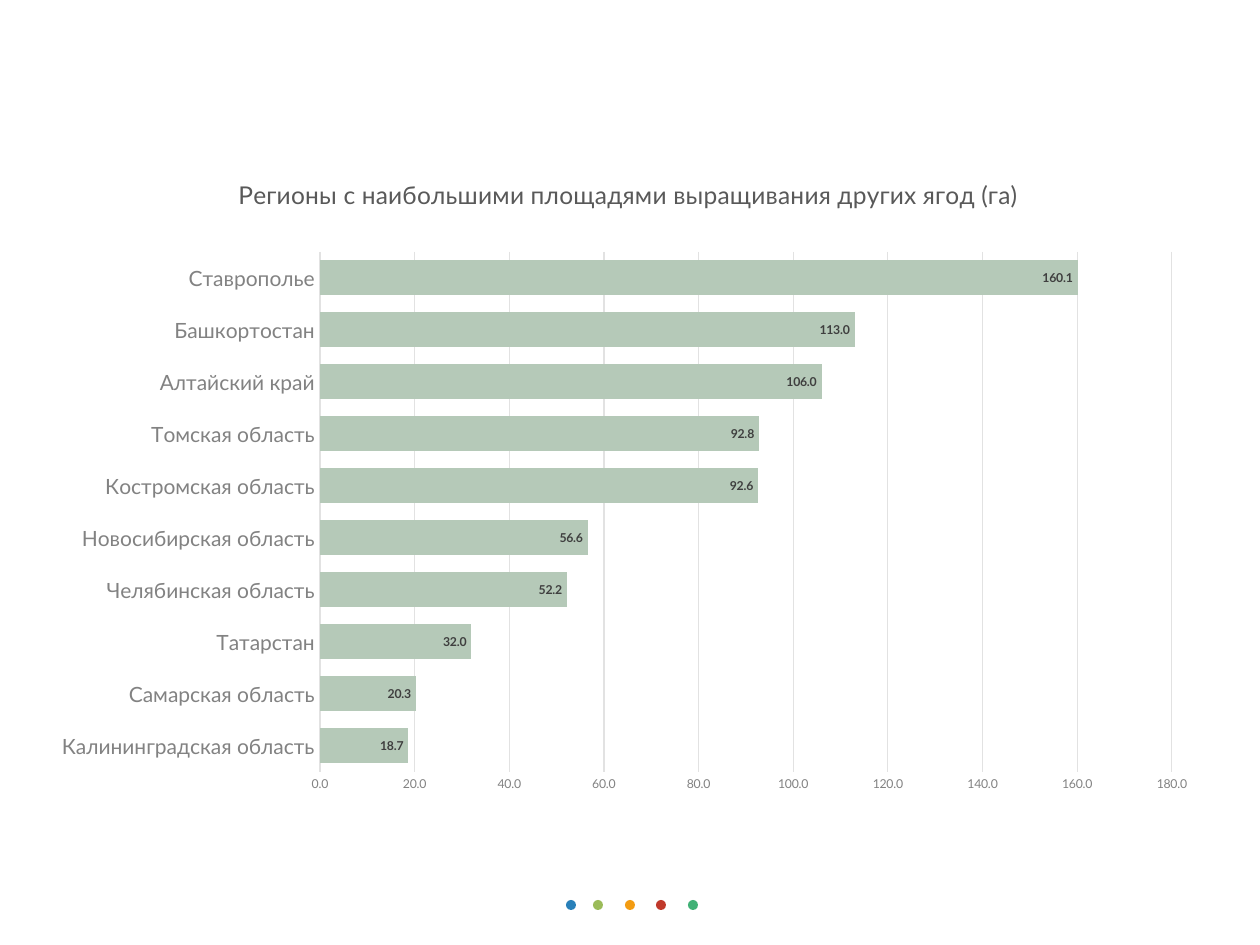
from typing import NamedTuple

from lxml import etree
from pptx import Presentation
from pptx.chart.data import CategoryChartData
from pptx.dml.color import RGBColor
from pptx.enum.chart import XL_CHART_TYPE, XL_LABEL_POSITION, XL_TICK_MARK
from pptx.enum.shapes import MSO_SHAPE
from pptx.oxml import parse_xml
from pptx.oxml.ns import nsdecls
from pptx.util import Emu, Pt

BAR_CLUSTERED = XL_CHART_TYPE.BAR_CLUSTERED
INSIDE_END = XL_LABEL_POSITION.INSIDE_END
NO_TICK = XL_TICK_MARK.NONE
ELLIPSE = MSO_SHAPE.OVAL

PX_PER_INCH = 126
FONT_NAME = "Lato"
NUMBER_FORMAT = "0.0"
DARK, TITLE_GREY, AXIS_GREY = "3F3F3F", "595959", "828282"
LINE_GREY, BAR_GREEN = "E2E2E2", "B5C9B8"
TITLE = "Регионы с наибольшими площадями выращивания других ягод (га)"


class Area(NamedTuple):
    left: int
    top: int
    width: int
    height: int


class Region(NamedTuple):
    name: str
    hectares: float


class Dot(NamedTuple):
    left: int
    color: str


CHART_AREA = Area(39, 144, 1173, 662)
PLOT_AREA = Area(320, 252, 852, 520)
TITLE_AREA = Area(234, 172, 780, 30)
DOT_TOP, DOT_SIZE = 900, 10

REGIONS = [
    Region("Калининградская область", 18.7),
    Region("Самарская область", 20.3),
    Region("Татарстан", 32),
    Region("Челябинская область", 52.2),
    Region("Новосибирская область", 56.6),
    Region("Костромская область", 92.6),
    Region("Томская область", 92.8),
    Region("Алтайский край", 106),
    Region("Башкортостан", 113),
    Region("Ставрополье", 160.1),
]
DOTS = [
    Dot(566, "2980B9"),
    Dot(593, "9BBB59"),
    Dot(625, "F39C12"),
    Dot(656, "C0392B"),
    Dot(688, "41B176"),
]


def px(length: int) -> Emu:
    return Emu(round(length * 914400 / PX_PER_INCH))


def rgb(color: str) -> RGBColor:
    return RGBColor.from_string(color)


def set_values(target, values: dict) -> None:
    for name, value in values.items():
        setattr(target, name, value)


def set_font(font, size: int, color: str, bold: bool = False) -> None:
    set_values(font, {"name": FONT_NAME, "size": Pt(size), "bold": bold})
    font.color.rgb = rgb(color)


def set_line(line, color: str, width: float) -> None:
    line.color.rgb = rgb(color)
    line.width = Pt(width)


def manual_layout(area: Area, is_plot: bool) -> etree._Element:
    """Place a chart part by its slide position; only a plot has a size."""
    settings = {"layoutTarget": "inner"} if is_plot else {}
    settings |= {
        "xMode": "edge",
        "yMode": "edge",
        "x": (area.left - CHART_AREA.left) / CHART_AREA.width,
        "y": (area.top - CHART_AREA.top) / CHART_AREA.height,
    }
    if is_plot:
        settings |= {
            "w": area.width / CHART_AREA.width,
            "h": area.height / CHART_AREA.height,
        }
    items = "".join(f'<c:{name} val="{value}"/>' for name, value in settings.items())
    return parse_xml(
        f'<c:layout {nsdecls("c")}><c:manualLayout>{items}</c:manualLayout></c:layout>'
    )


def replace_layout(parent, layout, index: int) -> None:
    for old_layout in parent.findall(layout.tag):
        parent.remove(old_layout)
    parent.insert(index, layout)


def add_title(chart) -> None:
    title = chart.chart_title
    title.text_frame.text = TITLE
    set_font(title.text_frame.paragraphs[0].runs[0].font, 14, TITLE_GREY)
    title.include_in_layout = False
    replace_layout(title._element, manual_layout(TITLE_AREA, False), 1)


def format_axes(chart) -> None:
    for axis, size in ((chart.category_axis, 12), (chart.value_axis, 7)):
        set_values(axis, {"major_tick_mark": NO_TICK, "minor_tick_mark": NO_TICK})
        set_font(axis.tick_labels.font, size, AXIS_GREY)
    set_line(chart.category_axis.format.line, LINE_GREY, 1)
    value_axis = chart.value_axis
    set_values(value_axis, {
        "minimum_scale": 0,
        "maximum_scale": 180,
        "major_unit": 20,
        "has_major_gridlines": True,
    })
    value_axis.format.line.fill.background()
    set_line(value_axis.major_gridlines.format.line, LINE_GREY, 0.75)
    set_values(value_axis.tick_labels, {
        "number_format": NUMBER_FORMAT, "number_format_is_linked": False,
    })


def format_bars(chart) -> None:
    plot = chart.plots[0]
    set_values(plot, {"gap_width": 49, "overlap": -10, "vary_by_categories": False})
    series = plot.series[0]
    series.format.fill.solid()
    series.format.fill.fore_color.rgb = rgb(BAR_GREEN)
    labels = series.data_labels
    set_values(labels, {
        "show_value": True,
        "number_format": NUMBER_FORMAT,
        "number_format_is_linked": False,
        "position": INSIDE_END,
    })
    set_font(labels.font, 7, DARK, bold=True)


def add_region_chart(page) -> None:
    data = CategoryChartData(number_format=NUMBER_FORMAT)
    data.categories = [region.name for region in REGIONS]
    data.add_series("Series 1", [region.hectares for region in REGIONS])
    frame = page.shapes.add_chart(BAR_CLUSTERED, *map(px, CHART_AREA), data)
    chart = frame.chart
    chart.has_legend = False
    set_font(chart.font, 10, DARK)
    add_title(chart)
    format_axes(chart)
    format_bars(chart)
    plot_area = chart._chartSpace.chart.plotArea
    replace_layout(plot_area, manual_layout(PLOT_AREA, True), 0)


def add_dot(page, dot: Dot) -> None:
    area = Area(dot.left, DOT_TOP, DOT_SIZE, DOT_SIZE)
    shape = page.shapes.add_shape(ELLIPSE, *map(px, area))
    shape.shadow.inherit = False
    shape.fill.solid()
    shape.fill.fore_color.rgb = rgb(dot.color)
    shape.line.fill.background()


def main() -> None:
    deck = Presentation()
    set_values(deck, {"slide_width": px(1260), "slide_height": px(945)})
    page = deck.slides.add_slide(deck.slide_layouts[6])
    for dot in DOTS:
        add_dot(page, dot)
    add_region_chart(page)
    deck.save("out.pptx")


if __name__ == "__main__":
    main()
